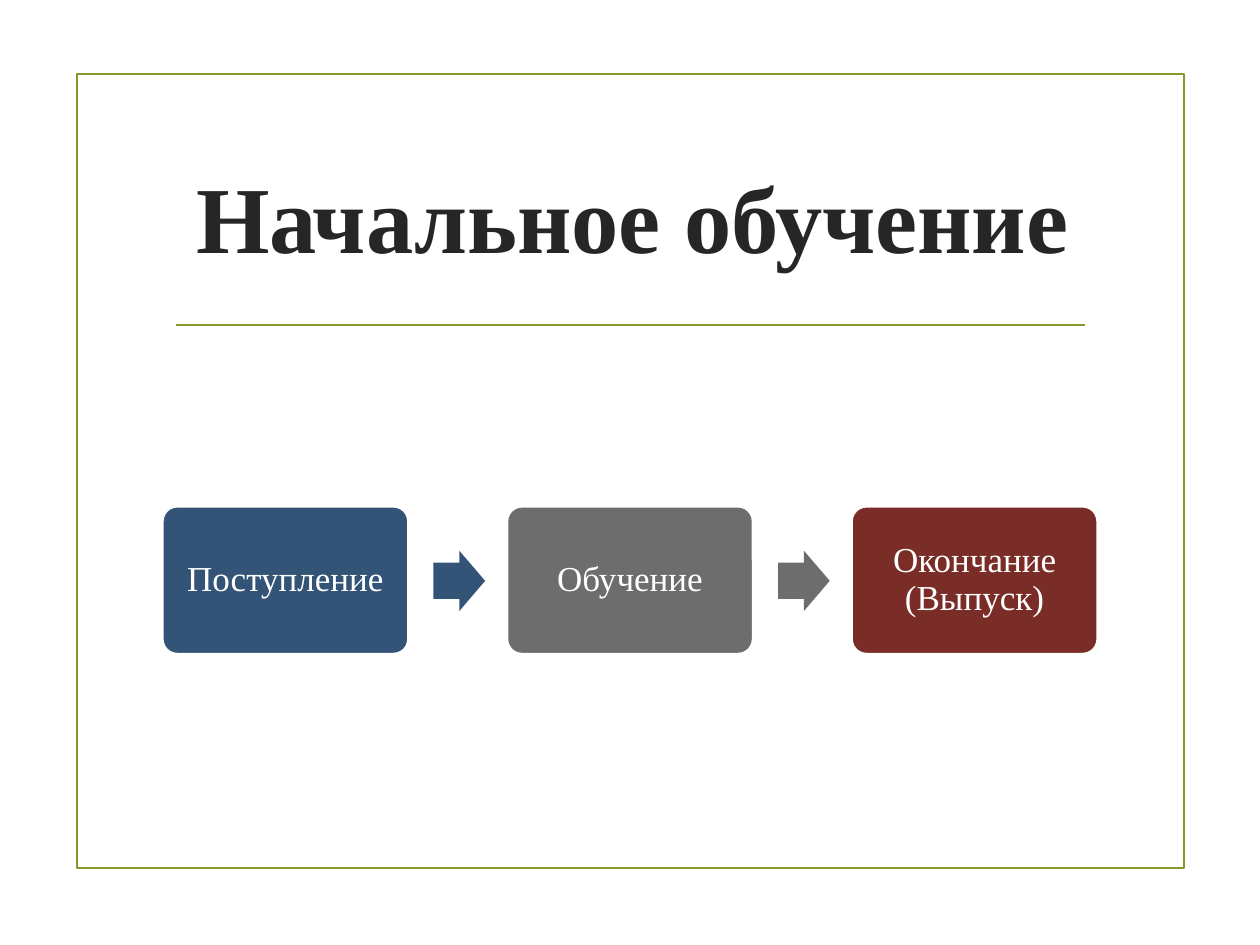
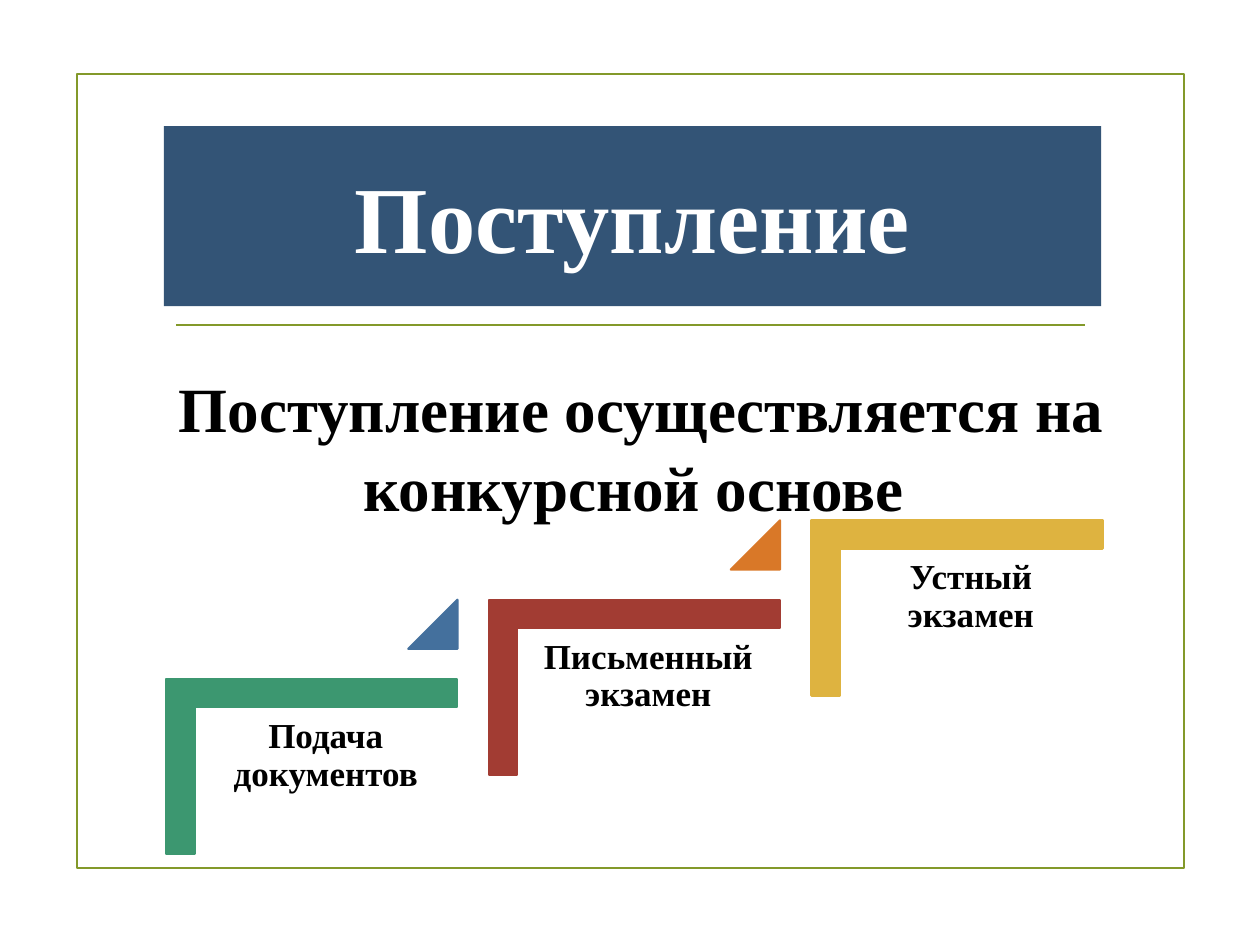
from pptx import Presentation
from pptx.dml.color import RGBColor
from pptx.enum.shapes import MSO_CONNECTOR, MSO_SHAPE
from pptx.enum.text import MSO_ANCHOR, MSO_AUTO_SIZE, PP_ALIGN
from pptx.oxml.ns import qn
from pptx.util import Inches, Pt
from lxml import etree

FONT = "Times New Roman"
OLIVE = RGBColor(0x83, 0x99, 0x2A)
NAVY = RGBColor(0x33, 0x54, 0x76)
GREY = RGBColor(0x6D, 0x6D, 0x6D)
MAROON = RGBColor(0x7A, 0x2D, 0x26)
GREEN = RGBColor(0x3C, 0x97, 0x70)
BLUE = RGBColor(0x44, 0x70, 0x9D)
RED = RGBColor(0xA2, 0x3C, 0x33)
ORANGE = RGBColor(0xD9, 0x78, 0x28)
YELLOW = RGBColor(0xDE, 0xB3, 0x40)
INK = RGBColor(0x26, 0x26, 0x26)
BLACK = RGBColor(0, 0, 0)
WHITE = RGBColor(0xFF, 0xFF, 0xFF)

RECTANGLE = MSO_SHAPE.RECTANGLE
ROUNDED = MSO_SHAPE.ROUNDED_RECTANGLE
ARROW = MSO_SHAPE.RIGHT_ARROW
CORNER = MSO_SHAPE.CORNER
TRIANGLE = MSO_SHAPE.ISOSCELES_TRIANGLE
STRAIGHT = MSO_CONNECTOR.STRAIGHT
MIDDLE, TOP = MSO_ANCHOR.MIDDLE, MSO_ANCHOR.TOP
CENTER = PP_ALIGN.CENTER
NO_AUTOFIT = MSO_AUTO_SIZE.NONE


def add_figure(slide, kind, box, fill=None, line=None, adjustments=()):
    figure = slide.shapes.add_shape(kind, *map(Inches, box))
    figure.shadow.inherit = False
    for colour, format_part in ((fill, figure.fill), (line, figure.line.fill)):
        if colour is None:
            format_part.background()
        else:
            format_part.solid()
            format_part.fore_color.rgb = colour
    if line is not None:
        figure.line.width = Pt(1.25)
    for index, value in enumerate(adjustments):
        figure.adjustments[index] = value
    return figure


def write(shape, text, size, color, bold=True, anchor=MIDDLE, spacing=None, inset=None):
    frame = shape.text_frame
    frame.auto_size = NO_AUTOFIT
    frame.word_wrap = True
    frame.vertical_anchor = anchor
    if inset is not None:
        for side in ("left", "top", "right", "bottom"):
            setattr(frame, f"margin_{side}", Inches(inset))
    frame.text = text
    paragraph = frame.paragraphs[0]
    paragraph.alignment = CENTER
    if spacing:
        paragraph.line_spacing = spacing
    for name, value in {"name": FONT, "size": Pt(size), "bold": bold}.items():
        setattr(paragraph.font, name, value)
    paragraph.font.color.rgb = color


prs = Presentation()
prs.slide_width, prs.slide_height = Inches(10), Inches(7.5)

# Frame, rule and title on both slides
slides = []
for heading, heading_color, band in (
    ("Начальное обучение", INK, None),
    ("Поступление", WHITE, NAVY),
):
    slide = prs.slides.add_slide(prs.slide_layouts[5])
    add_figure(slide, RECTANGLE, (0.61, 0.59, 8.79, 6.3), line=OLIVE)
    rule = slide.shapes.add_connector(
        STRAIGHT, Inches(1.4), Inches(2.58), Inches(8.61), Inches(2.58))
    rule.line.color.rgb = OLIVE
    rule.line.width = Pt(1.25)
    etree.SubElement(rule.element.spPr, qn("a:effectLst"))

    title = slide.shapes.title
    title.left, title.top = Inches(1.3), Inches(1)
    title.width, title.height = Inches(7.44), Inches(1.43)
    if band is not None:
        title.fill.solid()
        title.fill.fore_color.rgb = band
    write(title, heading, 54, heading_color)
    slides.append(slide)

overview, admission = slides

# Slide 1: three stages joined by arrows
stages = [("Поступление", NAVY), ("Обучение", GREY), ("Окончание (Выпуск)", MAROON)]
for index, (stage, color) in enumerate(stages):
    left = 1.29 + 2.735 * index
    card = add_figure(overview, ROUNDED, (left, 4.02, 1.95, 1.17), color, WHITE, [0.1])
    write(card, stage, 20, WHITE, bold=False, spacing=0.9, inset=0.08)
    if index < len(stages) - 1:
        add_figure(overview, ARROW, (left + 2.15, 4.37, 0.41, 0.48), color,
                   adjustments=[0.6, 0.5])

# Slide 2: staircase of admission steps
steps = [
    ("Подача документов", GREEN, BLUE),
    ("Письменный экзамен", RED, ORANGE),
    ("Устный экзамен", YELLOW, None),
]
for index, (step, color, marker_color) in enumerate(steps):
    across, up = 2.56 * index, 0.63 * index
    bracket = add_figure(admission, CORNER, (1.78 + across, 4.93 - up, 1.39, 2.31),
                         color, color, [0.161, 0.161])
    bracket.rotation = 90
    label = admission.shapes.add_textbox(
        Inches(1.54 + across), Inches(5.62 - up), Inches(2.09), Inches(1.83))
    write(label, step, 20, BLACK, anchor=TOP, spacing=0.9, inset=0.08)
    if marker_color is not None:
        add_figure(admission, TRIANGLE, (3.24 + across, 4.76 - up, 0.39, 0.39),
                   marker_color, marker_color, [1])

statement = admission.shapes.add_textbox(Inches(0.59), Inches(2.85), Inches(9), Inches(1.31))
write(statement, "Поступление осуществляется на конкурсной основе ", 36, BLACK,
      anchor=TOP, spacing=1.05)

prs.save("out.pptx")
